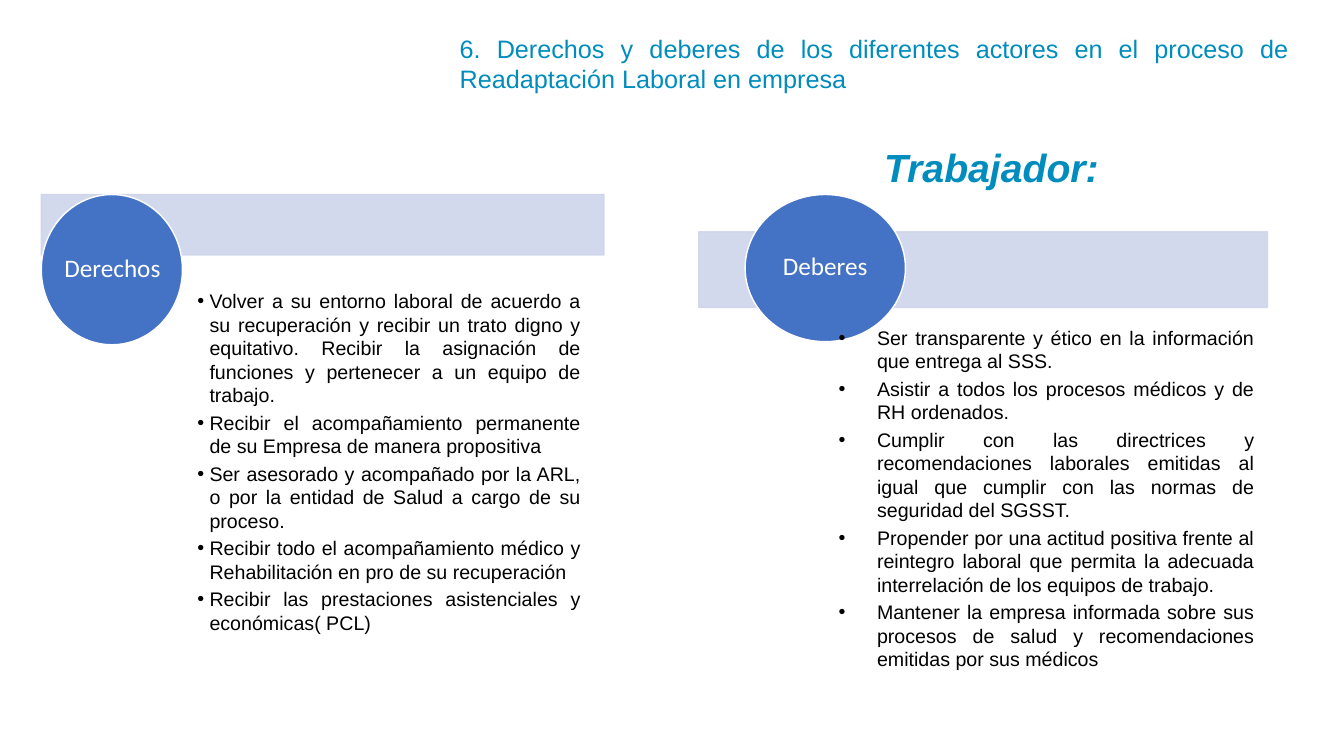
import pptx
import pptx.util
import pptx.dml.color
import pptx.enum.shapes
import pptx.enum.text
import pptx.oxml.ns
import lxml.etree

Inches = pptx.util.Inches
Pt = pptx.util.Pt
KINDS = pptx.enum.shapes.MSO_SHAPE
ALIGN = pptx.enum.text.PP_ALIGN
ANCHOR = pptx.enum.text.MSO_ANCHOR
COLORS = {"title": "008DBD", "bar": "CFD5EA", "disc": "4472C4", "white": "FFFFFF", "black": "000000"}

RIGHTS = [
    "Volver a su entorno laboral de acuerdo a su recuperación y recibir un trato digno y equitativo. "
    "Recibir la asignación de funciones y pertenecer a un equipo de trabajo.",
    "Recibir el acompañamiento permanente de su Empresa de manera propositiva",
    "Ser asesorado y acompañado por la ARL, o por la entidad de Salud a cargo de su proceso.",
    "Recibir todo el acompañamiento médico y Rehabilitación en pro de su recuperación",
    "Recibir las prestaciones asistenciales y económicas( PCL)",
]
DUTIES = [
    "Ser transparente y ético en la información que entrega al SSS.",
    "Asistir a todos los procesos médicos y de RH ordenados.",
    "Cumplir con las directrices y recomendaciones laborales emitidas al igual que cumplir con las "
    "normas de seguridad del SGSST.",
    "Propender por una actitud positiva frente al reintegro laboral que permita la adecuada "
    "interrelación de los equipos de trabajo.",
    "Mantener la empresa informada sobre sus procesos de salud y recomendaciones emitidas por sus médicos",
]


def color(name):
    return pptx.dml.color.RGBColor.from_string(COLORS[name])


def write(para, text, size=14, font="Arial", tint="black", bold=False, italic=False, align=ALIGN.JUSTIFY):
    para.alignment = align
    run = para.add_run()
    run.text = text
    run.font.size = Pt(size)
    run.font.name = font
    run.font.bold = bold
    run.font.italic = italic
    run.font.color.rgb = color(tint)


class Board:
    """Draw styled elements on the current slide."""

    def __init__(self, slide):
        self.slide = slide

    def shape(self, kind, box, fill, line, alpha=None):
        item = self.slide.shapes.add_shape(kind, *map(Inches, box))
        item.shadow.inherit = False
        item.fill.solid()
        item.fill.fore_color.rgb = color(fill)
        item.line.color.rgb = color(line)
        item.line.width = Pt(1)
        if alpha:
            for node in item.element.spPr.iter(pptx.oxml.ns.qn("a:srgbClr")):
                lxml.etree.SubElement(node, pptx.oxml.ns.qn("a:alpha"), val=str(alpha * 1000))

    def frame(self, box):
        frame = self.slide.shapes.add_textbox(*map(Inches, box)).text_frame
        frame.word_wrap = True
        return frame

    def text(self, box, text, **style):
        write(self.frame(box).paragraphs[0], text, **style)

    def label(self, box, text):
        frame = self.frame(box)
        frame.margin_left = frame.margin_right = frame.margin_top = frame.margin_bottom = 0
        frame.vertical_anchor = ANCHOR.MIDDLE
        frame.paragraphs[0].line_spacing = 0.9
        write(frame.paragraphs[0], text, size=18, font="Calibri", tint="white", align=ALIGN.CENTER)

    def bullets(self, box, items, indent):
        frame = self.frame(box)
        for i, item in enumerate(items):
            para = frame.add_paragraph() if i else frame.paragraphs[0]
            para.space_before = Pt(2.8)
            write(para, item)
            props = para._p.get_or_add_pPr()
            props.set("marL", str(Inches(indent)))
            props.set("indent", str(-Inches(indent)))
            lxml.etree.SubElement(props, pptx.oxml.ns.qn("a:buFont"), typeface="Arial")
            lxml.etree.SubElement(props, pptx.oxml.ns.qn("a:buChar"), char="•")

    def panel(self, bar, disc, name, spot):
        self.shape(KINDS.RECTANGLE, bar, "bar", "bar", alpha=90)
        self.shape(KINDS.OVAL, disc, "disc", "white")
        self.label(spot, name)


def main():
    deck = pptx.Presentation()
    deck.slide_width = Inches(13.33)
    deck.slide_height = Inches(7.5)
    board = Board(deck.slides.add_slide(deck.slide_layouts[6]))
    board.text((4.46, 0.28, 8.42, 0.71),
               "6. Derechos y deberes de los diferentes actores en el proceso de "
               "Readaptación Laboral en empresa", size=18, tint="title")
    board.panel((0.41, 1.93, 5.58, 0.6), (0.41, 1.93, 1.4, 1.49), "Derechos", (0.62, 2.15, 0.99, 1.05))
    board.panel((6.93, 2.3, 5.64, 0.75), (7.39, 1.93, 1.59, 1.46), "Deberes", (7.62, 2.14, 1.13, 1.03))
    board.text((8.67, 1.37, 3.14, 0.57), "Trabajador:", size=28, tint="title",
               bold=True, italic=True, align=ALIGN.LEFT)
    board.bullets((1.86, 2.82, 4, 3.58), RIGHTS, 0.12)
    board.bullets((8.22, 3.18, 4.32, 4.32), DUTIES, 0.38)
    deck.save("out.pptx")


if __name__ == "__main__":
    main()
